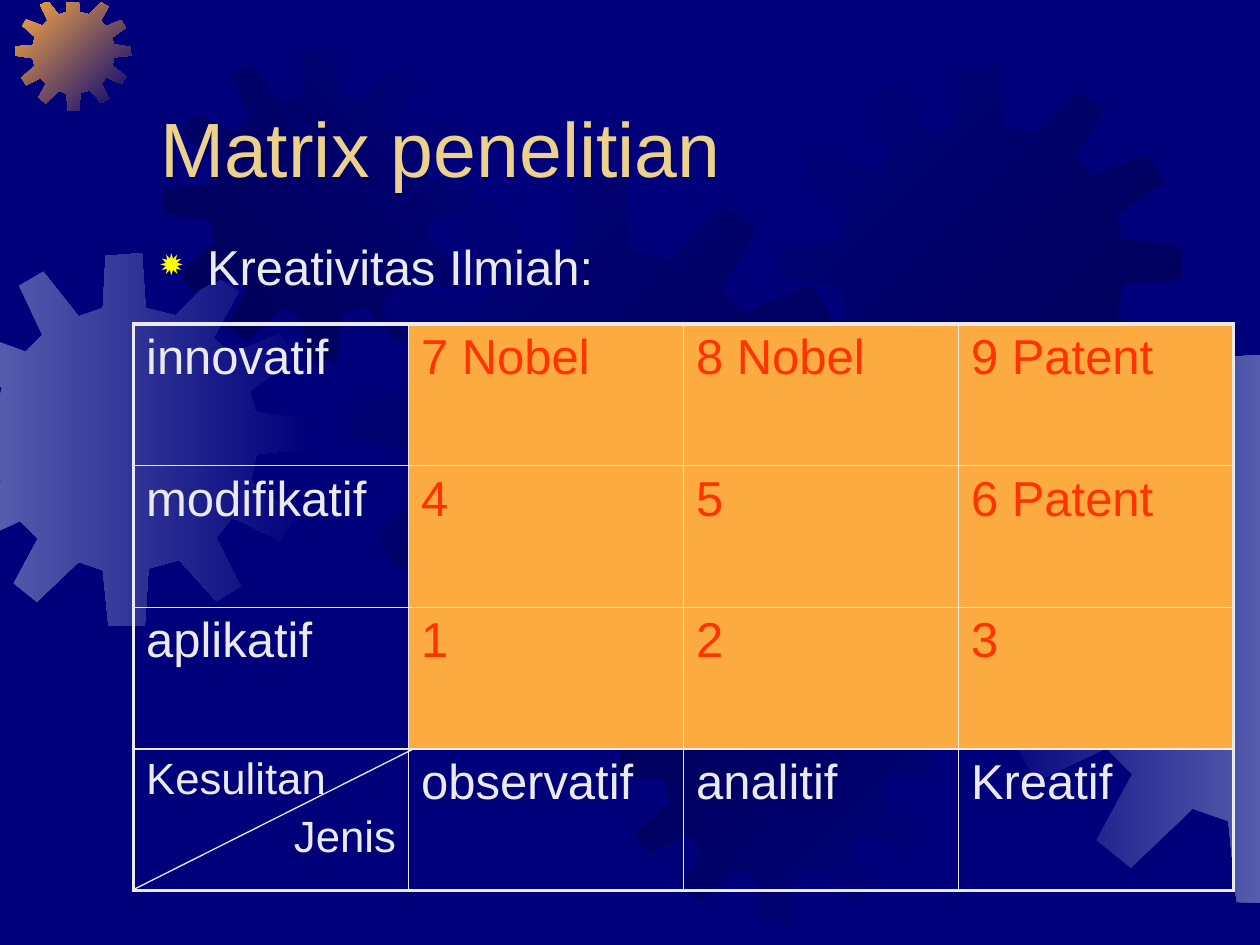
from typing import NamedTuple, Optional

from pptx import Presentation
from pptx.dml.color import RGBColor
from pptx.enum.shapes import MSO_CONNECTOR as Connector
from pptx.enum.text import MSO_ANCHOR as Anchor, PP_ALIGN as Align
from pptx.oxml.ns import qn
from pptx.util import Pt
from lxml.etree import SubElement

COLORS = {
    "navy": "00007A",
    "shade": "000054",
    "haze": "555BAD",
    "amber": "FCAB40",
    "gold": "EBD189",
    "pale": "EAEAEA",
    "red": "FF3300",
    "yellow": "FFFF00",
}
FONT = "Arial"
BOUNDS = (-0.72, 1.44, 720.72, 542.88)

GEAR_SIZE = 401
GEAR_OUTLINE = [
    (255, 67), (223, 59), (219, 0), (180, 3), (177, 59), (151, 68),
    (113, 20), (87, 35), (112, 88), (94, 106), (38, 85), (25, 107),
    (68, 145), (61, 174), (1, 178), (0, 210), (61, 219), (67, 246),
    (22, 287), (38, 312), (88, 288), (107, 307), (81, 355), (106, 375),
    (151, 332), (177, 341), (183, 400), (222, 401), (226, 339), (259, 330),
    (299, 374), (325, 358), (299, 306), (316, 284), (368, 309), (384, 281),
    (336, 246), (342, 216), (401, 210), (400, 180), (341, 171), (335, 148),
    (383, 114), (367, 87), (313, 109), (296, 91), (323, 41), (297, 25),
]


class Gear(NamedTuple):
    left: float
    top: float
    size: float
    start: str
    end: Optional[str] = None
    clockwise: int = 0


class Entry(NamedTuple):
    lines: tuple
    size: float = 28
    color: str = "pale"
    fill: Optional[str] = None


def rated(text: str) -> Entry:
    return Entry((text,), color="red", fill="amber")


GEARS = [
    Gear(-35.28, 144.72, 213.12, "haze", "navy"),
    Gear(8.64, -2.88, 66.24, "amber", "navy", 45),
    Gear(93.6, 28.08, 178.56, "shade", "navy", 315),
    Gear(199.44, 100.08, 289, "navy", "shade", 45),
    Gear(0, 378, 269.28, "navy"),
    Gear(353.52, 348.48, 178.56, "shade", "navy", 45),
    Gear(444.96, 38.16, 230.4, "navy", "shade", 45),
    Gear(563.04, 201.6, 314.64, "navy", "haze"),
]

MATRIX = [
    [Entry(("innovatif",)), rated("7 Nobel"), rated("8 Nobel"), rated("9 Patent")],
    [Entry(("modifikatif",)), rated("4"), rated("5"), rated("6 Patent")],
    [Entry(("aplikatif",)), rated("1"), rated("2"), rated("3")],
    [Entry(("Kesulitan", "Jenis"), size=25), Entry(("observatif",)),
     Entry(("analitif",)), Entry(("Kreatif",))],
]
MATRIX_LEFT, MATRIX_TOP = 76.32, 185.04
CELL_WIDTH, CELL_HEIGHT = 157.14, 81


def rgb(name: str) -> RGBColor:
    return RGBColor.from_string(COLORS[name])


def set_font(paragraph, size: float, color: str) -> None:
    font = paragraph.font
    font.name, font.size = FONT, Pt(size)
    font.color.rgb = rgb(color)


def clip(points: list, axis: int, limit: float, sign: int) -> list:
    kept = []
    for a, b in zip(points[-1:] + points[:-1], points):
        a_gap, b_gap = (sign * (p[axis] - limit) for p in (a, b))
        if a_gap * b_gap < 0:
            share = a_gap / (a_gap - b_gap)
            kept.append(tuple(s + share * (e - s) for s, e in zip(a, b)))
        if b_gap >= 0:
            kept.append(b)
    return kept


def draw_gear(slide, gear: Gear) -> None:
    scale = gear.size / GEAR_SIZE
    points = [(gear.left + x * scale, gear.top + y * scale) for x, y in GEAR_OUTLINE]
    for side, limit in enumerate(BOUNDS):
        points = clip(points, side % 2, limit, 1 if side < 2 else -1)
    corners = [(Pt(x), Pt(y)) for x, y in points]
    builder = slide.shapes.build_freeform(*corners[0], scale=1.0)
    builder.add_line_segments(corners[1:], close=True)
    shape = builder.convert_to_shape()
    shape.shadow.inherit = False
    shape.line.fill.background()
    if gear.end:
        shape.fill.gradient()
        shape.fill.gradient_angle = (360 - gear.clockwise) % 360
        for stop, name in zip(shape.fill.gradient_stops, (gear.start, gear.end)):
            stop.color.rgb = rgb(name)
    else:
        shape.fill.solid()
        shape.fill.fore_color.rgb = rgb(gear.start)
        solid = shape.element.spPr.find(qn("a:solidFill"))
        SubElement(solid[0], qn("a:alpha"), val="50000")


def add_solid(parent, color: str) -> None:
    SubElement(SubElement(parent, qn("a:solidFill")), qn("a:srgbClr"), val=COLORS[color])


def draw_cell(cell, entry: Entry, outer: dict) -> None:
    properties = cell._tc.get_or_add_tcPr()
    for side in "LRTB":
        width = Pt(2.25 if outer[side] else 1)
        add_solid(SubElement(properties, qn(f"a:ln{side}"), w=str(width)), "pale")
    if entry.fill:
        cell.fill.solid()
        cell.fill.fore_color.rgb = rgb(entry.fill)
    else:
        cell.fill.background()
    cell.text = "\n".join(entry.lines)
    for index, paragraph in enumerate(cell.text_frame.paragraphs):
        set_font(paragraph, entry.size, entry.color)
        if index:
            paragraph.alignment = Align.RIGHT
            paragraph.space_before = Pt(entry.size * 0.2)


def draw_matrix(slide) -> None:
    rows, cols = len(MATRIX), len(MATRIX[0])
    matrix = slide.shapes.add_table(
        rows, cols, Pt(MATRIX_LEFT), Pt(MATRIX_TOP),
        Pt(cols * CELL_WIDTH), Pt(rows * CELL_HEIGHT)).table
    matrix.first_row = matrix.horz_banding = False
    for r, entries in enumerate(MATRIX):
        for c, entry in enumerate(entries):
            outer = {"L": c == 0, "R": c == cols - 1, "T": r == 0, "B": r == rows - 1}
            draw_cell(matrix.cell(r, c), entry, outer)


def draw_title(slide) -> None:
    title = slide.shapes.title
    title.left, title.top, title.width, title.height = Pt(84.24), Pt(23.76), Pt(612), Pt(90)
    title.text_frame.text = "Matrix penelitian"
    title.text_frame.vertical_anchor = Anchor.BOTTOM
    heading = title.text_frame.paragraphs[0]
    heading.alignment = Align.LEFT
    set_font(heading, 44, "gold")


def draw_topic(slide) -> None:
    topic = slide.shapes.add_textbox(Pt(84.24), Pt(131.76), Pt(300.24), Pt(324)).text_frame
    topic.word_wrap = True
    topic.text = "Kreativitas Ilmiah:"
    paragraph = topic.paragraphs[0]
    properties = paragraph._p.get_or_add_pPr()
    properties.set("marL", str(Pt(27)))
    properties.set("indent", str(Pt(-27)))
    bullet_color = SubElement(properties, qn("a:buClr"))
    SubElement(bullet_color, qn("a:srgbClr"), val=COLORS["yellow"])
    SubElement(properties, qn("a:buSzPct"), val="80000")
    SubElement(properties, qn("a:buChar"), char="✹")
    set_font(paragraph, 28, "pale")


def draw_diagonal(slide) -> None:
    diagonal = slide.shapes.add_connector(
        Connector.STRAIGHT, Pt(76.32), Pt(508.32), Pt(235.44), Pt(428.4))
    diagonal.line.color.rgb = rgb("pale")
    diagonal.line.width = Pt(0.75)
    SubElement(diagonal.element.spPr, qn("a:effectLst"))


def main() -> None:
    deck = Presentation()
    deck.slide_width, deck.slide_height = Pt(720), Pt(540)
    slide = deck.slides.add_slide(deck.slide_layouts[5])
    slide.background.fill.solid()
    slide.background.fill.fore_color.rgb = rgb("navy")
    for gear in GEARS:
        draw_gear(slide, gear)
    title = slide.shapes.title.element
    title.getparent().append(title)
    draw_title(slide)
    draw_topic(slide)
    draw_matrix(slide)
    draw_diagonal(slide)
    deck.save("out.pptx")


if __name__ == "__main__":
    main()
